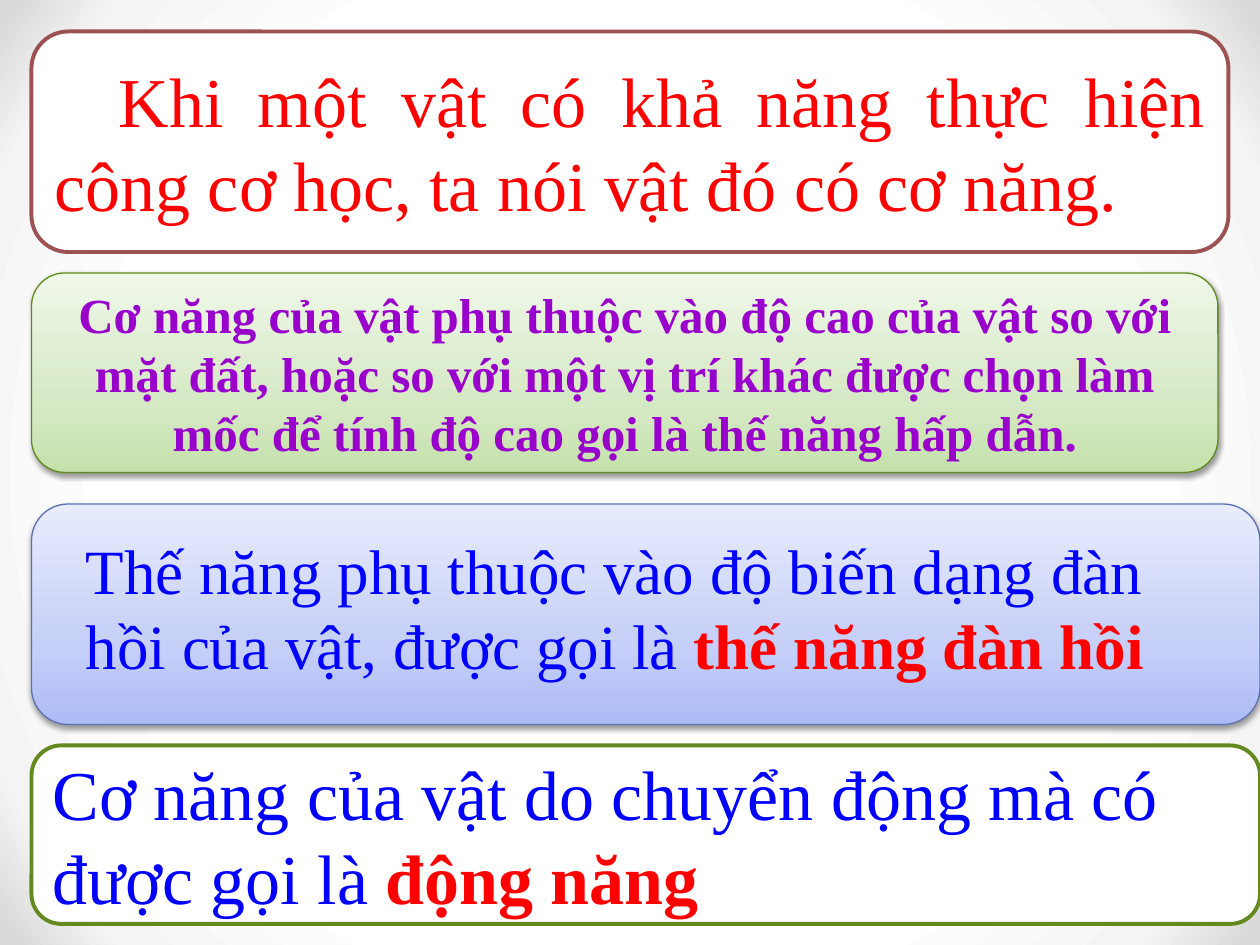
from lxml.etree import SubElement
from pptx import Presentation
from pptx.dml.color import RGBColor
from pptx.enum.shapes import MSO_SHAPE
from pptx.enum.text import MSO_ANCHOR, PP_ALIGN
from pptx.oxml.ns import qn
from pptx.util import Inches, Pt

CELL = Inches(1) // 12
COLUMNS, ROWS = 120, 90
FONT = "Times New Roman"

WHITE = RGBColor(0xFF, 0xFF, 0xFF)
BLACK = RGBColor(0, 0, 0)
RED = RGBColor(0xFF, 0, 0)
BLUE = RGBColor(0, 0, 0xFF)
PURPLE = RGBColor(0x99, 0, 0xCC)
MAROON = RGBColor(0x9C, 0x52, 0x52)
OLIVE = RGBColor(0x63, 0x89, 0x1F)
LEAF = RGBColor(0x62, 0x89, 0x1C)
STEEL = RGBColor(0x5C, 0x72, 0xB2)
BACKDROP = [(65, WHITE), (88, RGBColor(0xF4, 0xF4, 0xF4)),
            (98, RGBColor(0xDA, 0xDA, 0xDA))]
GREENS = [(0, RGBColor(0xC5, 0xE1, 0xAB)), (35, RGBColor(0xD6, 0xE9, 0xC5)),
          (100, RGBColor(0xEF, 0xF7, 0xE9))]
BLUES = [(0, RGBColor(0xAD, 0xBB, 0xF6)), (35, RGBColor(0xC5, 0xCF, 0xF8)),
         (100, RGBColor(0xE8, 0xEC, 0xFD))]


def add_node(parent, tag, **values):
    return SubElement(parent, qn(tag), {key: str(value) for key, value in values.items()})


def set_gradient(properties, stops, radial=False):
    """Turn the solid fill of a shape or background into a gradient."""
    solid = properties.find(qn("a:solidFill"))
    gradient = add_node(properties, "a:gradFill", rotWithShape=1)
    stop_list = add_node(gradient, "a:gsLst")
    for position, color in stops:
        stop = add_node(stop_list, "a:gs", pos=position * 1000)
        add_node(stop, "a:srgbClr", val=color)
    if radial:
        center = add_node(gradient, "a:path", path="circle")
        add_node(center, "a:fillToRect", l=50000, t=50000, r=50000, b=50000)
    else:
        add_node(gradient, "a:lin", ang=270 * 60000, scaled=0)
    properties.replace(solid, gradient)


def add_soft_shadow(shape):
    effects = shape._element.spPr.find(qn("a:effectLst"))
    shadow = add_node(effects, "a:outerShdw", blurRad=40000, dist=20000,
                      dir=90 * 60000, rotWithShape=0)
    color = add_node(shadow, "a:srgbClr", val=BLACK)
    add_node(color, "a:alpha", val=38000)


def add_panel(page, box, line_color, stops=None):
    """Rounded panel: plain white with a thick line, or shaded with a thin one."""
    panel = page.shapes.add_shape(MSO_SHAPE.ROUNDED_RECTANGLE,
                                  *(CELL * size for size in box))
    panel.shadow.inherit = False
    panel.fill.solid()
    panel.fill.fore_color.rgb = WHITE
    panel.line.color.rgb = line_color
    panel.line.width = Pt(0.75 if stops else 2.25)
    if stops:
        set_gradient(panel._element.spPr, stops)
        add_soft_shadow(panel)
    return panel


def write_text(shape, spans, size, align=PP_ALIGN.LEFT, anchor=MSO_ANCHOR.MIDDLE):
    """Fill a shape with one paragraph of (text, color, bold) spans."""
    frame = shape.text_frame
    frame.word_wrap = True
    frame.vertical_anchor = anchor
    para = frame.paragraphs[0]
    para.alignment = align
    for text, color, bold in spans:
        span = para.add_run()
        span.text = text
        span.font.color.rgb = color
        for name, value in {"name": FONT, "size": Pt(size), "bold": bold}.items():
            setattr(span.font, name, value)
    return para


def add_mechanical_energy(page, box):
    para = write_text(
        add_panel(page, box, MAROON),
        [("Khi một vật có khả năng thực hiện công cơ học, ta nói vật đó có cơ năng.",
          RED, False)], 40, PP_ALIGN.JUSTIFY)
    para._p.get_or_add_pPr().set("indent", str(Inches(0.51)))


def add_gravity_energy(page, box):
    write_text(
        add_panel(page, box, LEAF, GREENS),
        [("Cơ năng của vật phụ thuộc vào độ cao của vật so với mặt đất, hoặc so với "
          "một vị trí khác được chọn làm mốc để tính độ cao gọi là thế năng hấp dẫn.",
          PURPLE, True)], 28, PP_ALIGN.CENTER)


def add_elastic_energy(page, box):
    left, top, width, height = box
    add_panel(page, box, STEEL, BLUES)
    label = page.shapes.add_textbox(CELL * (left + 4), CELL * (top + 2),
                                    CELL * (width - 8), Inches(1.31))
    write_text(label, [("Thế năng phụ thuộc vào độ biến dạng đàn hồi của vật, được gọi là ",
                        BLUE, False), ("thế năng đàn hồi", RED, True)],
               36, anchor=MSO_ANCHOR.TOP)


def add_kinetic_energy(page, box):
    write_text(add_panel(page, box, OLIVE),
               [("Cơ năng của vật do chuyển động mà có được gọi là ", BLUE, False),
                ("động năng", RED, True)], 40)


def main():
    deck = Presentation()
    deck.slide_width, deck.slide_height = CELL * COLUMNS, CELL * ROWS
    page = deck.slides.add_slide(deck.slide_layouts[6])
    backdrop = page.background.fill
    backdrop.solid()
    backdrop.fore_color.rgb = WHITE
    set_gradient(page._element.cSld.bg.bgPr, BACKDROP, radial=True)

    margin = 3
    add_mechanical_energy(page, (margin, 3, 114, 21))
    add_gravity_energy(page, (margin, 26, 113, 19))
    add_elastic_energy(page, (margin, 48, COLUMNS - margin, 21))
    add_kinetic_energy(page, (margin, 71, COLUMNS - margin, 17))
    deck.save("out.pptx")


if __name__ == "__main__":
    main()
